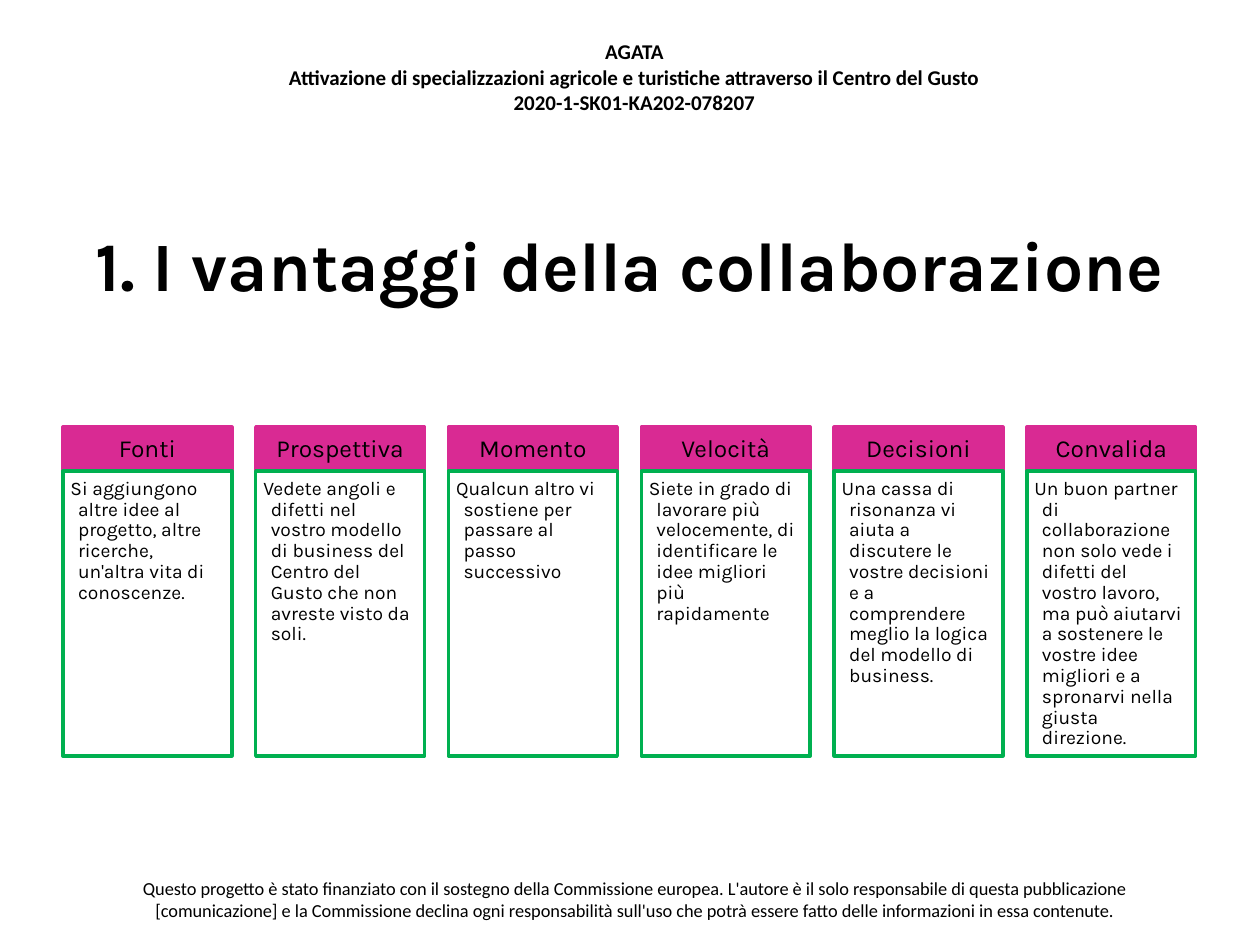
from pptx import Presentation
from pptx.dml.color import RGBColor
from pptx.enum.shapes import MSO_SHAPE
from pptx.enum.text import MSO_ANCHOR, PP_ALIGN
from pptx.util import Inches, Pt

RECTANGLE = MSO_SHAPE.RECTANGLE
TOP, MIDDLE = MSO_ANCHOR.TOP, MSO_ANCHOR.MIDDLE
LEFT, CENTER = PP_ALIGN.LEFT, PP_ALIGN.CENTER

PINK, GREEN, BLACK = "D92A93", "00B050", "000000"

PROJECT = [
    "AGATA",
    "Attivazione di specializzazioni agricole e turistiche attraverso il Centro del Gusto",
    "2020-1-SK01-KA202-078207",
]
TITLE = "1. I vantaggi della collaborazione"
BENEFITS = [
    ("Fonti", "Si aggiungono altre idee al progetto, altre ricerche, "
              "un'altra vita di conoscenze."),
    ("Prospettiva", "Vedete angoli e difetti nel vostro modello di business del "
                    "Centro del Gusto che non avreste visto da soli."),
    ("Momento", "Qualcun altro vi sostiene per passare al passo successivo"),
    ("Velocità", "Siete in grado di lavorare più velocemente, di identificare "
                 "le idee migliori più rapidamente"),
    ("Decisioni", "Una cassa di risonanza vi aiuta a discutere le vostre decisioni "
                  "e a comprendere meglio la logica del modello di business."),
    ("Convalida", "Un buon partner di collaborazione non solo vede i difetti del "
                  "vostro lavoro, ma può aiutarvi a sostenere le vostre idee migliori "
                  "e a spronarvi nella giusta direzione."),
]
FUNDING = ("Questo progetto è stato finanziato con il sostegno della Commissione europea. "
           "L'autore è il solo responsabile di questa pubblicazione [comunicazione] e la "
           "Commissione declina ogni responsabilità sull'uso che potrà essere fatto delle "
           "informazioni in essa contenute.")

COLUMN_LEFT, COLUMN_WIDTH, COLUMN_STEP = 0.5, 1.34, 1.53
HEADING_TOP, HEADING_HEIGHT, BODY_HEIGHT = 3.39, 0.35, 2.26


def color(hex_value):
    return RGBColor.from_string(hex_value)


def write(box, lines, *, size, font="Karla", bold=False, align=CENTER, anchor=TOP,
          insets=(0.1, 0.05, 0.1, 0.05), spacing=None, hanging=0):
    """Fill a box with one paragraph per line; insets run left, top, right, bottom."""
    frame = box.text_frame
    frame.word_wrap = True
    frame.vertical_anchor = anchor
    (frame.margin_left, frame.margin_top,
     frame.margin_right, frame.margin_bottom) = map(Inches, insets)
    for index, line in enumerate(lines):
        paragraph = frame.add_paragraph() if index else frame.paragraphs[0]
        paragraph.alignment = align
        if spacing:
            paragraph.line_spacing = spacing
        if hanging:
            properties = paragraph._p.get_or_add_pPr()
            properties.set("marL", str(Inches(hanging)))
            properties.set("indent", str(-Inches(hanging)))
        run = paragraph.add_run()
        run.text = line
        run.font.name = font
        run.font.size = Pt(size)
        run.font.bold = bold
        run.font.color.rgb = color(BLACK)


def add_text(slide, place, lines, **style):
    write(slide.shapes.add_textbox(*map(Inches, place)), lines, **style)


def add_panel(slide, place, line, fill=None):
    panel = slide.shapes.add_shape(RECTANGLE, *map(Inches, place))
    panel.shadow.inherit = False
    if fill:
        panel.fill.solid()
        panel.fill.fore_color.rgb = color(fill)
    else:
        panel.fill.background()
    panel.line.color.rgb = color(line)
    panel.line.width = Pt(2)
    return panel


def main():
    deck = Presentation()
    deck.slide_width, deck.slide_height = Inches(10), Inches(7.5)
    slide = deck.slides.add_slide(deck.slide_layouts[6])

    add_text(slide, (2.08, 0.26, 5.91, 0.71), PROJECT, size=12, font="Calibri", bold=True)
    add_text(slide, (0.54, 6.91, 9, 0.47), [FUNDING], size=10.5, font="Calibri")
    add_text(slide, (0.5, 1.47, 9, 1.25), [TITLE], size=39.6, bold=True, anchor=MIDDLE)

    for column, (heading, benefit) in enumerate(BENEFITS):
        left = COLUMN_LEFT + column * COLUMN_STEP
        header = add_panel(slide, (left, HEADING_TOP, COLUMN_WIDTH, HEADING_HEIGHT),
                           PINK, fill=PINK)
        write(header, [heading], size=14, anchor=MIDDLE, spacing=0.9,
              insets=(0.11, 0.06, 0.11, 0.06))
        body = add_panel(slide, (left, HEADING_TOP + HEADING_HEIGHT, COLUMN_WIDTH, BODY_HEIGHT),
                         GREEN)
        write(body, [benefit], size=11, align=LEFT, spacing=0.9, hanging=0.06,
              insets=(0.06, 0.06, 0.09, 0.1))

    deck.save("out.pptx")


if __name__ == "__main__":
    main()
